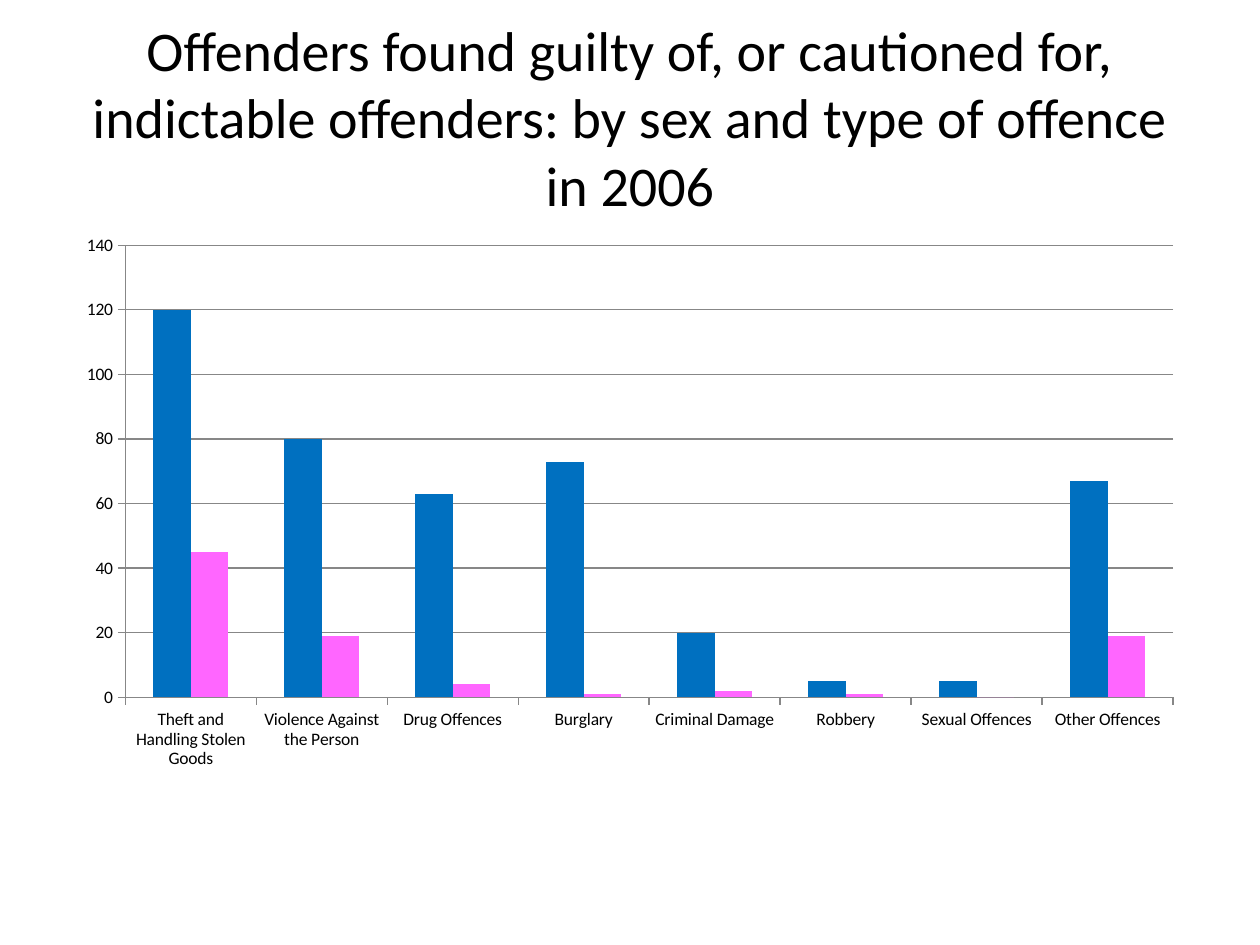
from pptx import Presentation
from pptx import util as u
from pptx.chart import data
from pptx.dml import color
from pptx.enum import chart as ch
from pptx.enum import text


def rgb(value):
    return color.RGBColor.from_string(value)


BLACK, AXIS_GREY = "000000", "878787"

presentation = Presentation()
presentation.slide_width = u.Inches(10)
presentation.slide_height = u.Inches(7.5)
slide = presentation.slides.add_slide(presentation.slide_layouts[6])

# Title
title = slide.shapes.add_textbox(u.Inches(0.5), u.Inches(0.3), u.Inches(9), u.Inches(1.25))
frame_format = {
    "word_wrap": True,
    "auto_size": text.MSO_AUTO_SIZE.NONE,
    "vertical_anchor": text.MSO_ANCHOR.MIDDLE,
}
for name, value in frame_format.items():
    setattr(title.text_frame, name, value)
paragraph = title.text_frame.paragraphs[0]
paragraph.alignment = text.PP_ALIGN.CENTER
run = paragraph.add_run()
run.text = (
    "Offenders found guilty of, or cautioned for, indictable offenders: "
    "by sex and type of offence in 2006"
)

# Chart of offences, one series for each sex
chart_data = data.CategoryChartData()
chart_data.categories = [
    "Theft and Handling Stolen Goods",
    "Violence Against the Person",
    "Drug Offences",
    "Burglary",
    "Criminal Damage",
    "Robbery",
    "Sexual Offences",
    "Other Offences",
]
series_rows = [
    ("Series 1", "0070C0", [120, 80, 63, 73, 20, 5, 5, 67]),
    ("Series 2", "FF66FF", [45, 19, 4, 1, 2, 1, 0, 19]),
]
for name, fill, values in series_rows:
    chart_data.add_series(name, values)
chart = slide.shapes.add_chart(
    ch.XL_CHART_TYPE.COLUMN_CLUSTERED,
    u.Inches(0.51), u.Inches(1.78), u.Inches(8.98), u.Inches(4.41),
    chart_data,
).chart
chart.has_legend = False
chart.has_title = False

# Fonts of title and chart
for font, size in ((run.font, 32), (chart.font, 10)):
    font.name = "Calibri"
    font.size = u.Pt(size)
    font.color.rgb = rgb(BLACK)

# Columns
plot = chart.plots[0]
for name, value in {"gap_width": 150, "overlap": 0, "vary_by_categories": False}.items():
    setattr(plot, name, value)
for series, (name, fill, values) in zip(plot.series, series_rows):
    series.format.fill.solid()
    series.format.fill.fore_color.rgb = rgb(fill)

# Axes and gridlines
value_axis, category_axis = chart.value_axis, chart.category_axis
value_format = {
    "minimum_scale": 0,
    "maximum_scale": 140,
    "major_unit": 20,
    "has_major_gridlines": True,
}
for name, value in value_format.items():
    setattr(value_axis, name, value)
for axis in (value_axis, category_axis):
    axis.major_tick_mark = ch.XL_TICK_MARK.OUTSIDE
for part in (value_axis, category_axis, value_axis.major_gridlines):
    part.format.line.color.rgb = rgb(AXIS_GREY)
    part.format.line.width = u.Pt(0.75)

presentation.save("out.pptx")
